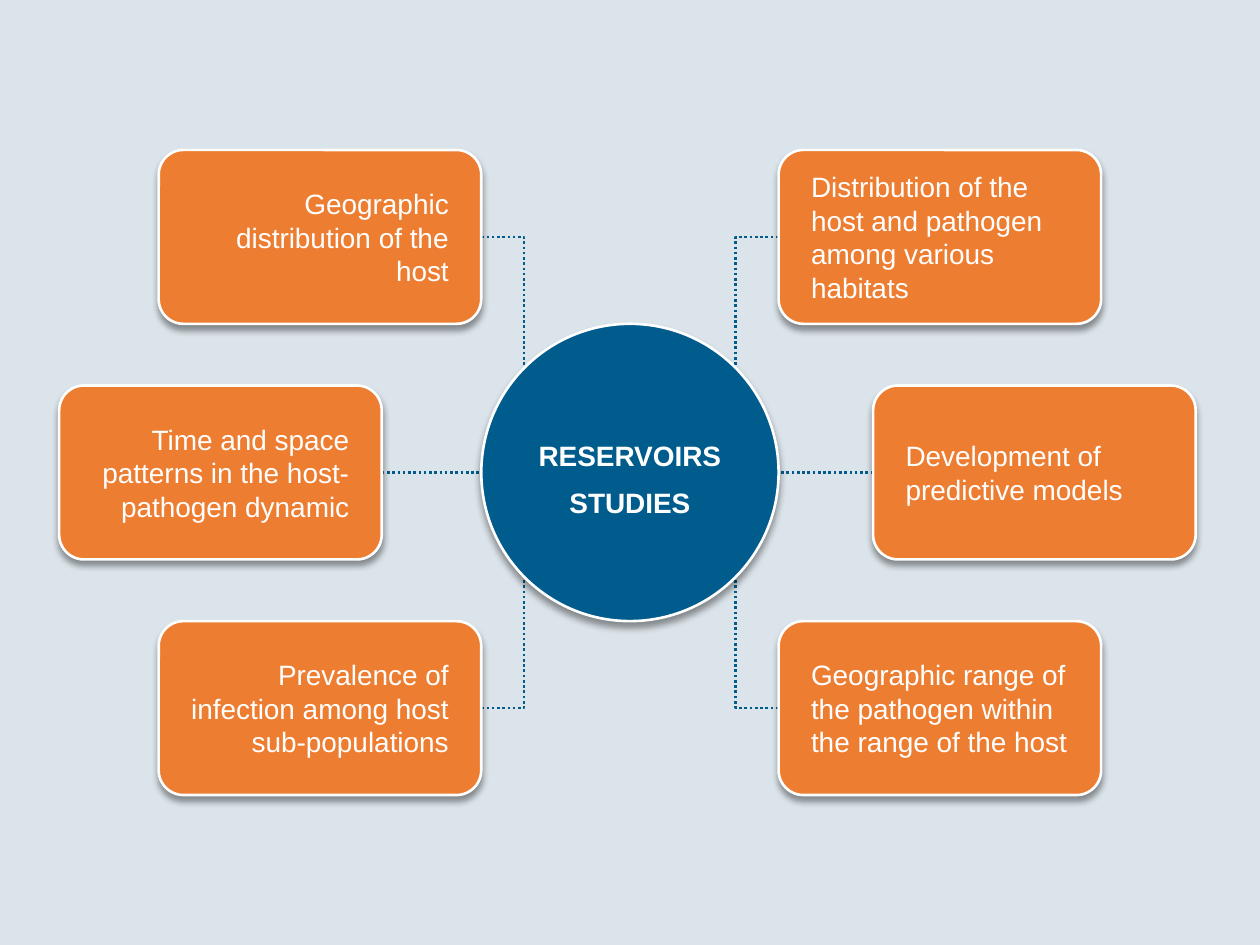
from pptx import Presentation
from pptx.dml.color import RGBColor
from pptx.enum.dml import MSO_LINE
from pptx.enum.shapes import MSO_CONNECTOR, MSO_SHAPE
from pptx.enum.text import MSO_ANCHOR, PP_ALIGN
from pptx.oxml import parse_xml
from pptx.oxml.ns import nsdecls
from pptx.util import Inches, Pt

PALE = RGBColor(0xDB, 0xE4, 0xEA)
BLUE = RGBColor(0x00, 0x5C, 0x8D)
ORANGE = RGBColor(0xED, 0x7D, 0x31)
WHITE = RGBColor(0xFF, 0xFF, 0xFF)

SHADOW = (
    f'<a:effectLst {nsdecls("a")}><a:outerShdw blurRad="50800" dist="38100" dir="5400000" '
    'algn="t" rotWithShape="0"><a:srgbClr val="000000"><a:alpha val="40000"/></a:srgbClr>'
    '</a:outerShdw></a:effectLst>'
)
NO_EFFECT = f'<a:effectLst {nsdecls("a")}/>'

BOX_W, BOX_H = 2.56, 1.38
HUB_SIZE = 2.36
CENTER_X, CENTER_Y = 5, 3.75
ROW_STEP = 1.87
ELBOW_X, ELBOW_Y = 0.84, 0.84  # elbow ends, measured from the hub centre

prs = Presentation()
prs.slide_width, prs.slide_height = Inches(10), Inches(7.5)
slide = prs.slides.add_slide(prs.slide_layouts[6])
shapes = slide.shapes


def add_card(kind, left, top, width, height, fill, lines, align, margins):
    """Add a white-edged shape with a soft shadow and white text."""
    card = shapes.add_shape(kind, Inches(left), Inches(top), Inches(width), Inches(height))
    card.fill.solid()
    card.fill.fore_color.rgb = fill
    card.line.color.rgb = WHITE
    card.line.width = Pt(1.5)
    card._element.spPr.append(parse_xml(SHADOW))
    frame = card.text_frame
    frame.word_wrap = True
    frame.vertical_anchor = MSO_ANCHOR.MIDDLE
    frame.margin_left = frame.margin_right = Inches(margins[0])
    frame.margin_top = frame.margin_bottom = Inches(margins[1])
    frame.text = lines
    for paragraph in frame.paragraphs:
        paragraph.alignment = align
        font = paragraph.runs[0].font
        font.name, font.size, font.color.rgb = "Arial", Pt(16), WHITE
    return card


# Background
background = shapes.add_shape(MSO_SHAPE.RECTANGLE, 0, 0, prs.slide_width, prs.slide_height)
background.shadow.inherit = False
background.fill.solid()
background.fill.fore_color.rgb = PALE
background.line.fill.background()

# Central hub
hub = add_card(MSO_SHAPE.OVAL, CENTER_X - HUB_SIZE / 2, CENTER_Y - HUB_SIZE / 2,
               HUB_SIZE, HUB_SIZE, BLUE, "RESERVOIRS\nSTUDIES", PP_ALIGN.CENTER, (0.1, 0.1))
hub.text_frame.word_wrap = False
for paragraph in hub.text_frame.paragraphs:
    paragraph.line_spacing = 1.4
    paragraph.runs[0].font.bold = True

# Topics: side (-1 left, 1 right), row (-1 top, 0 middle, 1 bottom), box left edge, text
topics = [
    (-1, 0, 0.47, "Time and space patterns in the host-pathogen dynamic"),
    (1, 0, 6.93, "Development of predictive models"),
    (-1, -1, 1.26, "Geographic distribution of the host"),
    (1, -1, 6.18, "Distribution of the host and pathogen among various habitats"),
    (-1, 1, 1.26, "Prevalence of infection among host sub-populations"),
    (1, 1, 6.18, "Geographic range of the pathogen within the range of the host"),
]
for side, row, left, topic in topics:
    middle = CENTER_Y + row * ROW_STEP
    box = add_card(MSO_SHAPE.ROUNDED_RECTANGLE, left, middle - BOX_H / 2, BOX_W, BOX_H, ORANGE,
                   topic, PP_ALIGN.RIGHT if side < 0 else PP_ALIGN.LEFT, (0.2, 0.12))
    box.adjustments[0] = 0.142

    # Dotted link from the box's inner side to the hub
    inner_x = left + BOX_W if side < 0 else left
    end_x = CENTER_X + side * (ELBOW_X if row else HUB_SIZE / 2)
    link = shapes.add_connector(
        MSO_CONNECTOR.ELBOW if row else MSO_CONNECTOR.STRAIGHT,
        Inches(inner_x), Inches(middle), Inches(end_x), Inches(CENTER_Y + row * ELBOW_Y))
    if row:
        link._element.spPr.prstGeom.set("prst", "bentConnector2")  # a single corner
    else:
        link.begin_connect(box, 3 if side < 0 else 1)
    link.line.color.rgb = BLUE
    link.line.width = Pt(1.5)
    link.line.dash_style = MSO_LINE.ROUND_DOT
    link._element.spPr.append(parse_xml(NO_EFFECT))
    background._element.addnext(link._element)  # keep links behind the cards

prs.save("out.pptx")
